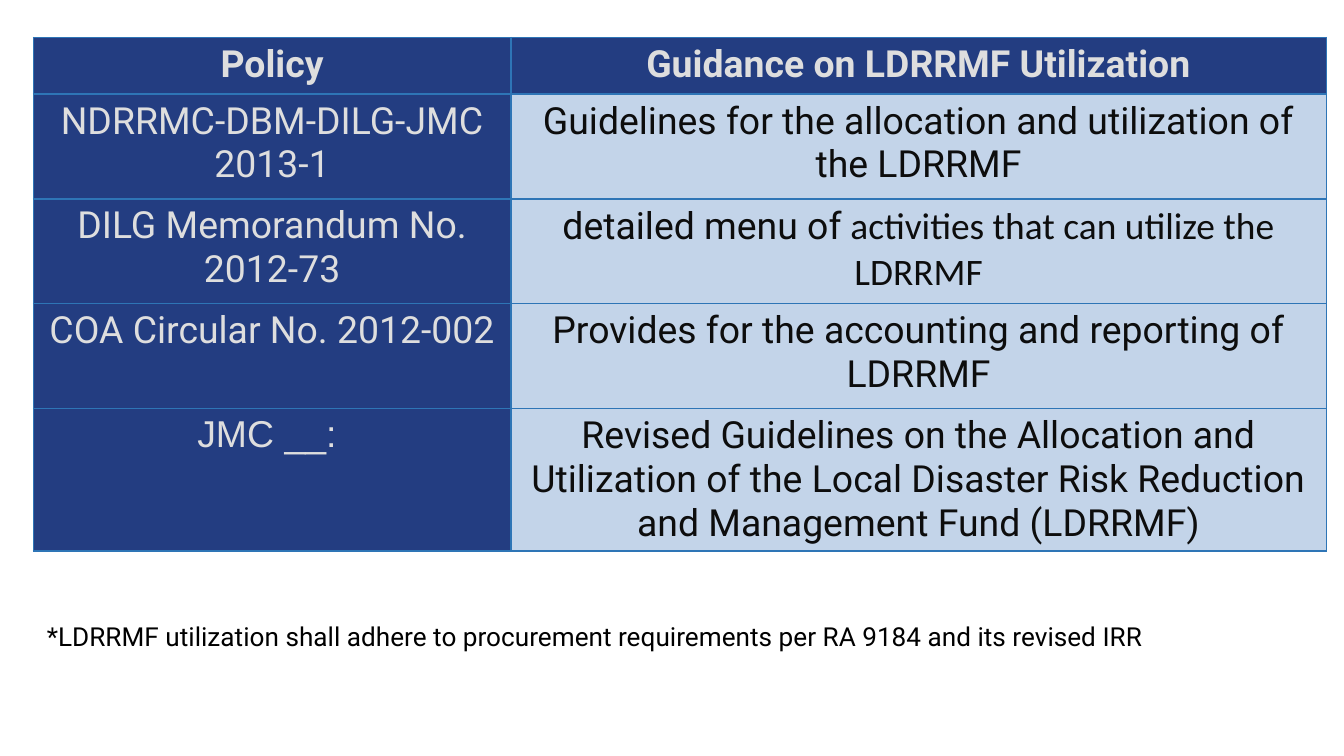
from lxml import etree
from pptx import Presentation
from pptx.dml.color import RGBColor
from pptx.enum.text import MSO_AUTO_SIZE, PP_ALIGN
from pptx.oxml.ns import qn
from pptx.util import Inches, Pt

NAVY = RGBColor(0x23, 0x3D, 0x81)
PALE_BLUE = RGBColor(0xC3, 0xD4, 0xE9)
BORDER_BLUE = RGBColor(0x2E, 0x75, 0xB6)
LIGHT_GREY = RGBColor(0xDE, 0xDE, 0xDE)
NEAR_BLACK = RGBColor(0x0D, 0x0D, 0x0D)
BLACK = RGBColor(0, 0, 0)

SLIDE_WIDTH = 10
LEFT, WIDTH = 0.25, 9.62
COLUMN_WIDTHS = [3.55, 6.07]
ROW_HEIGHTS = [0.42] + [0.78] * 4

# Each cell is a list of (text, font) runs.
POLICIES = [
    ([("Policy", "Roboto")],
     [("Guidance on LDRRMF Utilization", "Roboto")]),
    ([("NDRRMC-DBM-DILG-JMC 2013-1", "Roboto")],
     [("Guidelines for the allocation and utilization of the LDRRMF", "Roboto")]),
    ([("DILG Memorandum No. 2012-73", "Roboto")],
     [("detailed menu of", "Roboto"),
      (" activities that can utilize the LDRRMF", "Calibri")]),
    ([("COA Circular No. 2012-002", "Roboto")],
     [("Provides for the accounting and reporting of LDRRMF", "Roboto")]),
    ([("JMC __: ", "Arial")],
     [("Revised Guidelines on the Allocation and Utilization of the Local "
       "Disaster Risk Reduction and Management Fund (LDRRMF)", "Roboto")]),
]
FOOTNOTE = ("*LDRRMF utilization shall adhere to procurement requirements "
            "per RA 9184 and its revised IRR")


class PolicySlide:
    def __init__(self, slide):
        self.slide = slide

    def style_run(self, run, size, color, font="Roboto", bold=False):
        run.font.size = Pt(size)
        run.font.name = font
        run.font.bold = bold
        run.font.color.rgb = color

    def border(self, cell):
        """Draw all four sides; the lines must precede the fill in tcPr."""
        properties = cell._tc.get_or_add_tcPr()
        for index, side in enumerate(("a:lnL", "a:lnR", "a:lnT", "a:lnB")):
            line = etree.Element(qn(side), w=str(Pt(1)))
            fill = etree.SubElement(line, qn("a:solidFill"))
            etree.SubElement(fill, qn("a:srgbClr"), val=str(BORDER_BLUE))
            properties.insert(index, line)

    def cell(self, cell, runs, fill, color, bold):
        cell.margin_left = cell.margin_right = Inches(0.07)
        cell.margin_top = cell.margin_bottom = Inches(0.04)
        cell.fill.solid()
        cell.fill.fore_color.rgb = fill
        self.border(cell)
        paragraph = cell.text_frame.paragraphs[0]
        paragraph.alignment = PP_ALIGN.CENTER
        for text, font in runs:
            run = paragraph.add_run()
            run.text = text
            self.style_run(run, 20, color, font, bold)

    def table(self, top, rows):
        table = self.slide.shapes.add_table(
            len(rows), len(COLUMN_WIDTHS), Inches(LEFT), Inches(top),
            Inches(WIDTH), Inches(sum(ROW_HEIGHTS))).table
        for column, width in zip(table.columns, COLUMN_WIDTHS):
            column.width = Inches(width)
        for row, height in zip(table.rows, ROW_HEIGHTS):
            row.height = Inches(height)
        for r, row in enumerate(rows):
            for c, runs in enumerate(row):
                heading = r == 0 or c == 0
                self.cell(table.cell(r, c), runs,
                          NAVY if heading else PALE_BLUE,
                          LIGHT_GREY if heading else NEAR_BLACK, r == 0)

    def footnote(self, top, text):
        box = self.slide.shapes.add_textbox(
            Inches(LEFT), Inches(top), Inches(WIDTH), Inches(0.34))
        frame = box.text_frame
        frame.word_wrap = True
        frame.auto_size = MSO_AUTO_SIZE.SHAPE_TO_FIT_TEXT
        frame.text = text
        self.style_run(frame.paragraphs[0].runs[0], 14, BLACK)


def main():
    deck = Presentation()
    deck.slide_width = Inches(SLIDE_WIDTH)
    deck.slide_height = Inches(SLIDE_WIDTH * 9 / 16)
    page = PolicySlide(deck.slides.add_slide(deck.slide_layouts[6]))
    page.table(0.28, POLICIES)
    page.footnote(4.57, FOOTNOTE)
    deck.save("out.pptx")


if __name__ == "__main__":
    main()
